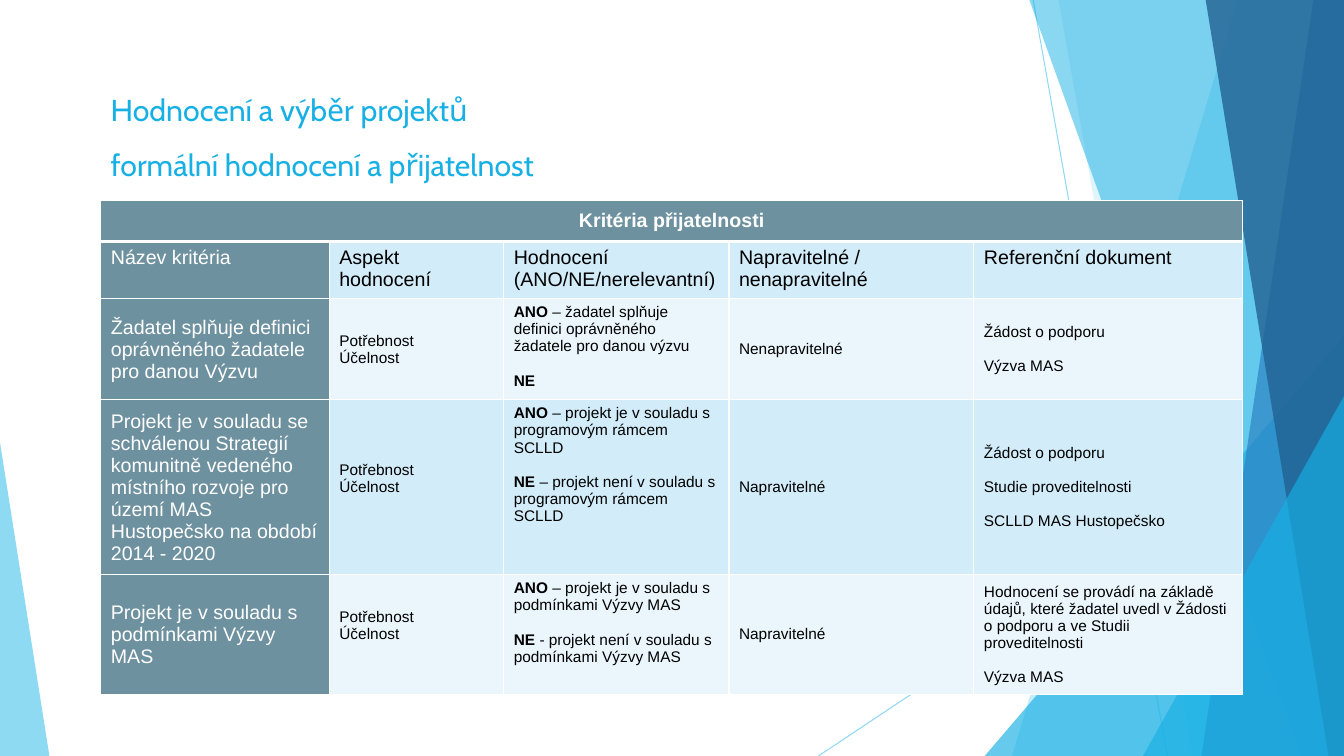
"""Build a slide with a table of project eligibility criteria."""
import pptx
import pptx.dml.color
import pptx.enum.shapes
import pptx.enum.text
import pptx.oxml
import pptx.oxml.ns
import pptx.util

Pt = pptx.util.Pt
Anchor = pptx.enum.text.MSO_ANCHOR
Align = pptx.enum.text.PP_ALIGN

WIDTH, HEIGHT = 960, 540
TITLE = "Hodnocení a výběr projektů \vformální hodnocení a přijatelnost"
TABLE_TITLE = "Kritéria přijatelnosti"
HEADINGS = ["Název kritéria", "Aspekt hodnocení", "Hodnocení (ANO/NE/nerelevantní)",
            "Napravitelné / nenapravitelné", "Referenční dokument"]
ASPECTS = ["Potřebnost", "Účelnost"]
CRITERIA = [
    [["Žadatel splňuje definici oprávněného žadatele pro danou Výzvu"],
     ASPECTS,
     ["ANO| – žadatel splňuje definici oprávněného žadatele pro danou výzvu", "NE|"],
     ["Nenapravitelné"],
     ["Žádost o podporu", "Výzva MAS"]],
    [["Projekt je v souladu se schválenou Strategií komunitně vedeného místního rozvoje "
      "pro území MAS Hustopečsko na období 2014 - 2020"],
     ASPECTS,
     ["ANO| – projekt je v souladu s programovým rámcem SCLLD",
      "NE |– projekt není v souladu s programovým rámcem SCLLD"],
     ["Napravitelné"],
     ["Žádost o podporu", "Studie proveditelnosti", "SCLLD MAS Hustopečsko"]],
    [["Projekt je v souladu s podmínkami Výzvy MAS"],
     ASPECTS,
     ["ANO| – projekt je v souladu s podmínkami Výzvy MAS",
      "NE |- projekt není v souladu s podmínkami Výzvy MAS"],
     ["Napravitelné"],
     ["Hodnocení se provádí na základě údajů, které žadatel uvedl v Žádosti o podporu "
      "a ve Studii proveditelnosti", "Výzva MAS"]],
]
COLUMN_WIDTHS = [163.2, 124.6, 160.9, 175, 192.1]
ROW_HEIGHTS = [29.5, 38.7, 68.4, 117.4, 80.4]
SLATE, BANDS = "6E91A0", ["EAF6FC", "D2ECF9"]
LINE_GAP = 12.2

RAYS = [(738, 0, 833.8, HEIGHT), (WIDTH, 290.2, 584.6, HEIGHT)]
# (kind, geometry, colour, opacity)
FACETS = [
    ("band", (884.2, 722.9), "5FCBEF", 36),
    ("band", (756, 851.8), "5FCBEF", 20),
    ("triangle", (703.4, 239.8, 256.6, 1), "17B0E4", 66),
    ("band", (735.1, 929.5), "17B0E4", 50),
    ("band", (938.2, 858.2), "2E83C3", 70),
    ("band", (861.1, 949), "226292", 80),
    ("triangle", (816.5, 283, 143.5, 1), "17B0E4", 66),
    ("triangle", (0, 316.1, 35.3, 0), "5FCBEF", 70),
]


def colour(value):
    return pptx.dml.color.RGBColor.from_string(value)


def set_opacity(shape, percent):
    for tint in shape._element.spPr.iter(pptx.oxml.ns.qn("a:srgbClr")):
        alpha = pptx.oxml.parse_xml(
            f'<a:alpha {pptx.oxml.ns.nsdecls("a")} val="{percent * 1000}"/>')
        tint.append(alpha)


def draw_ray(page, x1, y1, x2, y2):
    ray = page.shapes.add_connector(pptx.enum.shapes.MSO_CONNECTOR.STRAIGHT,
                                    Pt(x1), Pt(y1), Pt(x2), Pt(y2))
    ray.line.color.rgb = colour("5FCBEF")
    ray.line.width = Pt(0.75)
    set_opacity(ray, 70)
    ray._element.spPr.append(
        pptx.oxml.parse_xml(f'<a:effectLst {pptx.oxml.ns.nsdecls("a")}/>'))


def draw_facet(page, kind, geometry, fill, opacity):
    if kind == "band":
        top_left, bottom_left = geometry
        corners = [(WIDTH, -0.6), (WIDTH, HEIGHT), (bottom_left, HEIGHT)]
        builder = page.shapes.build_freeform(Pt(top_left), Pt(-0.6))
        builder.add_line_segments([(Pt(x), Pt(y)) for x, y in corners], close=True)
        facet = builder.convert_to_shape()
    else:
        left, top, width, apex = geometry
        facet = page.shapes.add_shape(
            pptx.enum.shapes.MSO_SHAPE.ISOSCELES_TRIANGLE,
            Pt(left), Pt(top), Pt(width), Pt(HEIGHT - top))
        facet.adjustments[0] = apex
    facet.shadow.inherit = False
    facet.line.fill.background()
    facet.fill.solid()
    facet.fill.fore_color.rgb = colour(fill)
    set_opacity(facet, opacity)


def write(frame, paragraphs, size, tint, font="Arial", bold=False,
          align=Align.LEFT, gap=0, spacing=None):
    for index, text in enumerate(paragraphs):
        para = frame.add_paragraph() if index else frame.paragraphs[0]
        para.alignment = align
        para.space_before = Pt(gap if index else 0)
        if spacing:
            para.line_spacing = spacing
        lead, _, rest = text.rpartition("|")
        for part, weight in ((lead, True), (rest, bold)):
            for position, piece in enumerate(part.split("\v")):
                if position:
                    para.add_line_break()
                if piece:
                    span = para.add_run()
                    span.text = piece
                    span.font.name = font
                    span.font.size = Pt(size)
                    span.font.bold = weight
                    span.font.color.rgb = colour(tint)


def style_cell(cell, fill, top=1, bottom=1, anchor=Anchor.TOP):
    cell.vertical_anchor = anchor
    cell.fill.solid()
    cell.fill.fore_color.rgb = colour(fill)
    properties = cell._tc.get_or_add_tcPr()
    for index, (side, width) in enumerate(zip("LRTB", (1, 1, top, bottom))):
        properties.insert(index, pptx.oxml.parse_xml(
            f'<a:ln{side} {pptx.oxml.ns.nsdecls("a")} w="{Pt(width)}"><a:solidFill>'
            f'<a:srgbClr val="FFFFFF"/></a:solidFill></a:ln{side}>'))


def draw_table(page):
    table = page.shapes.add_table(len(ROW_HEIGHTS), len(COLUMN_WIDTHS), Pt(72), Pt(143),
                                  Pt(sum(COLUMN_WIDTHS)), Pt(sum(ROW_HEIGHTS))).table
    table.first_row = table.horz_banding = False
    for column, width in zip(table.columns, COLUMN_WIDTHS):
        column.width = Pt(width)
    for row, height in zip(table.rows, ROW_HEIGHTS):
        row.height = Pt(height)
    for number, heading in enumerate(HEADINGS):
        style_cell(table.cell(0, number), SLATE, bottom=3, anchor=Anchor.MIDDLE)
        cell = table.cell(1, number)
        style_cell(cell, BANDS[1] if number else SLATE, top=3)
        write(cell.text_frame, [heading], 14, "000000" if number else "FFFFFF")
    table.cell(0, 0).merge(table.cell(0, len(HEADINGS) - 1))
    write(table.cell(0, 0).text_frame, [TABLE_TITLE], 14, "FFFFFF",
          bold=True, align=Align.CENTER)
    for row, criterion in enumerate(CRITERIA, 2):
        for number, paragraphs in enumerate(criterion):
            cell = table.cell(row, number)
            style_cell(cell, BANDS[row % 2] if number else SLATE,
                       anchor=Anchor.TOP if number == 2 else Anchor.MIDDLE)
            if number == 1 and row > 2:
                cell.margin_bottom = Pt(3.6 + LINE_GAP)
            write(cell.text_frame, paragraphs, 11 if number else 14,
                  "000000" if number else "FFFFFF", gap=LINE_GAP if number > 1 else 0)


def main():
    deck = pptx.Presentation()
    deck.slide_width, deck.slide_height = Pt(WIDTH), Pt(HEIGHT)
    page = deck.slides.add_slide(deck.slide_layouts[6])
    for ray in RAYS:
        draw_ray(page, *ray)
    for facet in FACETS:
        draw_facet(page, *facet)
    box = page.shapes.add_textbox(Pt(72), Pt(49), Pt(816), Pt(88))
    box.text_frame.word_wrap = True
    write(box.text_frame, [TITLE], 21.6, "17B0E4", font="Cabin", spacing=1.5)
    draw_table(page)
    deck.save("out.pptx")


if __name__ == "__main__":
    main()
